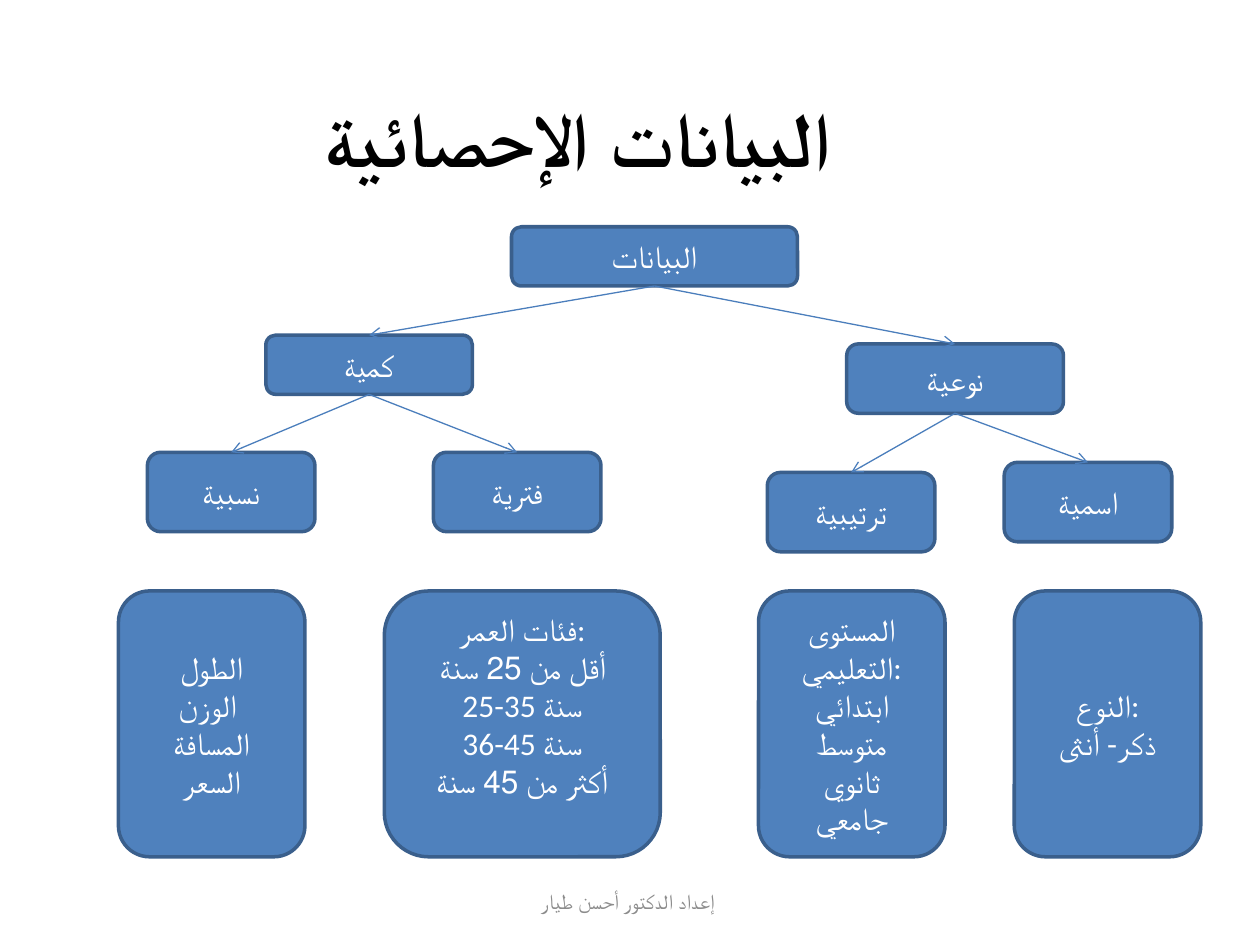
from pptx import Presentation
from pptx.dml.color import RGBColor
from pptx.enum.shapes import MSO_CONNECTOR, MSO_SHAPE
from pptx.enum.text import MSO_ANCHOR, PP_ALIGN
from pptx.oxml.ns import qn
from pptx.util import Inches, Pt
from lxml.etree import SubElement

FONT = "Calibri"
TREE_TOP = 1.8
DETAIL_TOP = 4.69

# name: (parent, left, top, width, height), relative to the tree's top edge
NODES = {
    "البيانات": (None, 4.06, 0, 2.27, 0.47),
    "نوعية": ("البيانات", 6.72, 0.93, 1.72, 0.55),
    "كمية": ("البيانات", 2.11, 0.86, 1.64, 0.47),
    "اسمية": ("نوعية", 7.97, 1.87, 1.33, 0.63),
    "ترتيبية": ("نوعية", 6.09, 1.95, 1.33, 0.63),
    "فترية": ("كمية", 3.44, 1.79, 1.33, 0.63),
    "نسبية": ("كمية", 1.17, 1.79, 1.33, 0.63),
}

# left, width, bottom inset, lines
DETAILS = [
    (8.05, 1.48, 0.05, ["النوع:", "ذكر- أنثى"]),
    (6.02, 1.48, 0.05, ["المستوى التعليمي:", "ابتدائي", "متوسط", "ثانوي", "جامعي"]),
    (3.05, 2.19, 0.35, ["فئات العمر:", "أقل من 25 سنة", "25-35 سنة",
                        "36-45 سنة", "أكثر من 45 سنة"]),
    (0.94, 1.48, 0.05, ["الطول", "الوزن ", "المسافة", "السعر"]),
]


def color(value):
    return RGBColor.from_string(value)


def write(shape, lines, size=18, fill="FFFFFF", bold=False, rtl=False, bottom=0.05):
    frame = shape.text_frame
    frame.word_wrap = True
    frame.vertical_anchor = MSO_ANCHOR.MIDDLE
    frame.margin_bottom = Inches(bottom)
    for i, line in enumerate(lines):
        para = frame.add_paragraph() if i else frame.paragraphs[0]
        para.alignment = PP_ALIGN.CENTER
        if rtl:
            para._p.get_or_add_pPr().set("rtl", "1")
        run = para.add_run()
        run.text = line
        run.font.name = FONT
        run.font.size = Pt(size)
        run.font.bold = bold
        run.font.color.rgb = color(fill)


def add_label(slide, box, text, **style):
    write(slide.shapes.add_textbox(*map(Inches, box)), [text], **style)


def add_box(slide, box, lines, **style):
    shape = slide.shapes.add_shape(MSO_SHAPE.ROUNDED_RECTANGLE, *map(Inches, box))
    shape.shadow.inherit = False
    shape.fill.solid()
    shape.fill.fore_color.rgb = color("4F81BD")
    shape.line.color.rgb = color("3A5F8C")
    shape.line.width = Pt(2)
    write(shape, lines, **style)
    return shape


def add_arrow(slide, parent, child):
    """Join the parent's bottom centre to the child's top centre."""
    arrow = slide.shapes.add_connector(MSO_CONNECTOR.STRAIGHT, 0, 0, 0, 0)
    arrow.begin_connect(parent, 2)
    arrow.end_connect(child, 0)
    arrow.line.color.rgb = color("4B7EBC")
    arrow.line.width = Pt(0.75)
    SubElement(arrow.line._get_or_add_ln(), qn("a:tailEnd"), type="arrow")
    SubElement(arrow._element.spPr, qn("a:effectLst"))


def add_tree(slide, top):
    boxes = {
        name: add_box(slide, (left, top + drop, width, height), [name])
        for name, (_, left, drop, width, height) in NODES.items()
    }
    for name, (parent, *_) in NODES.items():
        if parent:
            add_arrow(slide, boxes[parent], boxes[name])


def add_details(slide, top, height):
    for left, width, bottom, lines in DETAILS:
        add_box(slide, (left, top, width, height), lines, bottom=bottom)


def main():
    deck = Presentation()
    deck.slide_width, deck.slide_height = Inches(10), Inches(7.5)
    slide = deck.slides.add_slide(deck.slide_layouts[6])
    add_label(slide, (0.5, 0.62, 8.17, 0.93), "البيانات الإحصائية",
              size=44, fill="000000", bold=True, rtl=True)
    add_label(slide, (3.42, 6.95, 3.17, 0.4), "إعداد الدكتور أحسن طيار ",
              size=12, fill="8C8C8C")
    add_tree(slide, TREE_TOP)
    add_details(slide, DETAIL_TOP, 2.11)
    deck.save("out.pptx")


if __name__ == "__main__":
    main()
